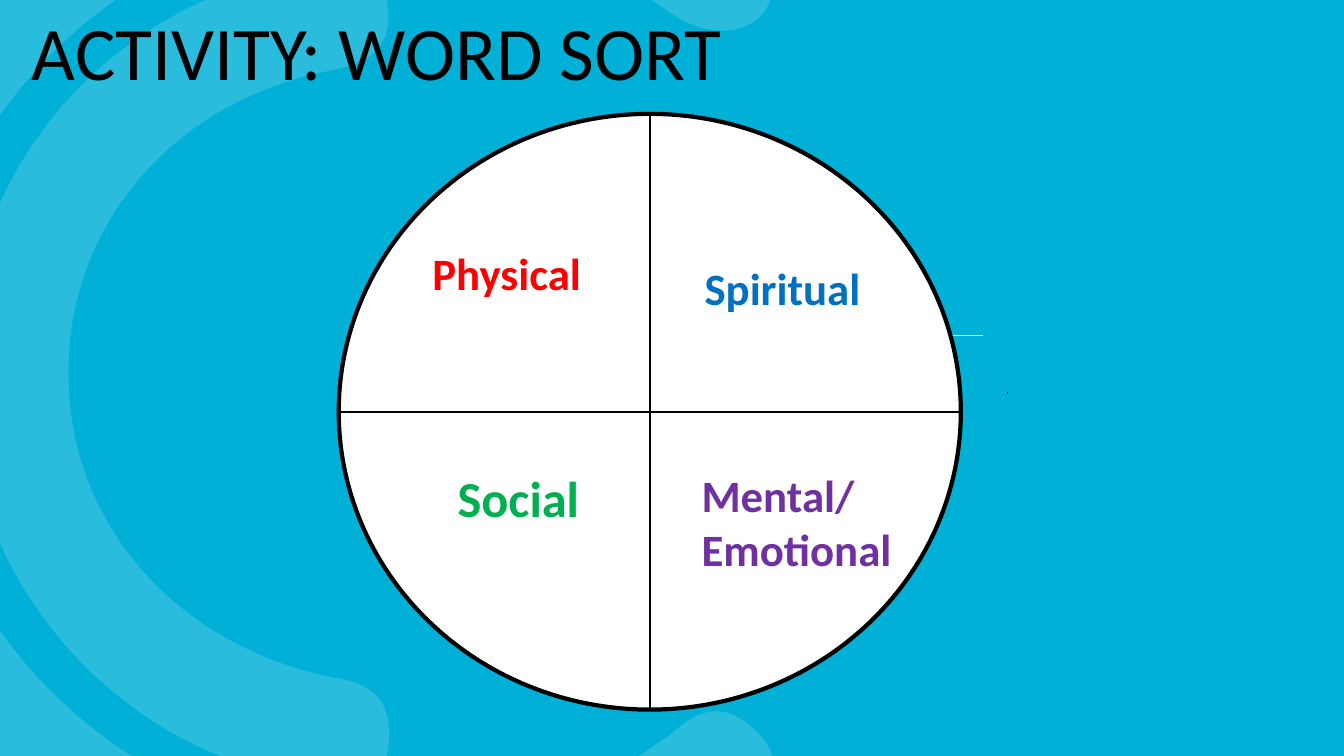
"""Build the word sort activity slide with a circle split into four kinds of health."""
from dataclasses import dataclass

import pptx
import pptx.dml.color
import pptx.enum.shapes
import pptx.enum.text
import pptx.oxml
import pptx.oxml.ns
import pptx.util
from pptx.util import Inches

Point = tuple[float, float]
Curve = tuple[float, float, float, float, float, float]


@dataclass(frozen=True)
class Theme:
    font: str = "Calibri"
    background: str = "00B0D7"
    white: str = "FFFFFF"
    black: str = "000000"
    red: str = "FF0000"
    blue: str = "0070C0"
    green: str = "00B050"
    purple: str = "7030A0"
    title_size: int = 54
    label_size: int = 32
    large_label_size: int = 36
    swirl_opacity: int = 16


@dataclass(frozen=True)
class Label:
    lines: tuple[str, ...]
    left: float
    top: float
    width: float
    height: float
    color: str
    size: int
    bold: bool = True
    wrap: bool = True
    centred: bool = False


@dataclass(frozen=True)
class Rule:
    start: Point
    end: Point
    color: str
    weight: float = 1.5


@dataclass(frozen=True)
class Swirl:
    start: Point
    curves: tuple[Curve, ...]


THEME = Theme()
SLIDE_WIDTH, SLIDE_HEIGHT = 13.33, 7.5
LEFT, TOP, WIDTH, HEIGHT = 3.36, 1.13, 6.17, 5.91
RIGHT, BOTTOM = LEFT + WIDTH, TOP + HEIGHT
CENTRE_X, CENTRE_Y = LEFT + WIDTH / 2, TOP + HEIGHT / 2

SWIRLS = (
    Swirl((-1.89, 3.38), (
        (-1.78, 1.51, -0.82, -0.2, 1.19, -1.22),
        (3.24, -2.24, 5.24, -2.05, 7.14, -0.81),
        (7.38, -0.64, 7.69, -0.49, 7.67, -0.15),
        (7.64, 0.31, 7.12, 0.46, 6.64, 0.12),
        (4.52, -1.39, 1.73, -1.05, 0.16, 0.93),
        (-1.24, 2.68, -1.1, 5.19, 0.44, 6.79),
        (2.04, 8.45, 4.57, 8.71, 6.47, 7.41),
        (6.53, 7.36, 6.62, 7.32, 6.68, 7.26),
        (6.99, 6.98, 7.27, 6.98, 7.56, 7.32),
        (7.86, 7.7, 7.56, 7.92, 7.29, 8.09),
        (5.81, 9.2, 4.15, 9.54, 2.34, 9.07),
        (-0.17, 8.43, -1.87, 6.21, -1.89, 3.38),
    )),
    Swirl((-0.36, 3.72), (
        (-0.36, 1.7, 1.03, 0.06, 3.06, -0.32),
        (3.37, -0.37, 3.74, -0.49, 3.83, -0.03),
        (3.91, 0.38, 3.78, 0.61, 3.28, 0.7),
        (1.71, 1, 0.66, 2.25, 0.68, 3.72),
        (0.68, 5.19, 1.75, 6.43, 3.35, 6.73),
        (3.8, 6.81, 3.89, 7.05, 3.85, 7.43),
        (3.78, 7.88, 3.43, 7.79, 3.13, 7.75),
        (1.16, 7.49, -0.36, 5.75, -0.36, 3.72),
    )),
)

BACKDROP_RULE = Rule((6.98, 3.33), (9.75, 3.33), THEME.white, 0.5)
UPRIGHT_RULE = Rule((CENTRE_X, TOP), (CENTRE_X, BOTTOM), THEME.black)
LEVEL_RULE = Rule((RIGHT, CENTRE_Y), (LEFT, CENTRE_Y), THEME.black)
DOT_RULE = Rule((9.99, 3.9), (10, 3.9), THEME.black)
QUARTERS = (
    Label(("Physical",), 4.19, 2.39, 1.81, 0.64, THEME.red, THEME.label_size),
    Label(("Spiritual",), 6.89, 2.54, 1.86, 0.64, THEME.blue, THEME.label_size),
    Label(("Social",), 4.44, 4.58, 1.57, 0.71, THEME.green, THEME.large_label_size),
    Label(("Mental/", "Emotional"), 6.86, 4.59, 2.2, 1.18, THEME.purple, THEME.label_size),
)
TITLE = Label(("ACTIVITY: WORD SORT",), 0.18, 0, 7.12, 1.01, THEME.black,
              THEME.title_size, bold=False, wrap=False, centred=True)


def rgb(color: str) -> pptx.dml.color.RGBColor:
    return pptx.dml.color.RGBColor.from_string(color)


def paint(shape, fill: str, outline: str | None = None, weight: float = 0) -> None:
    shape.shadow.inherit = False
    shape.fill.solid()
    shape.fill.fore_color.rgb = rgb(fill)
    if outline is None:
        shape.line.fill.background()
    else:
        shape.line.color.rgb = rgb(outline)
        shape.line.width = pptx.util.Pt(weight)


def bend(ribbon) -> None:
    segments = list(ribbon._element.iter(pptx.oxml.ns.qn("a:lnTo")))
    for first in range(0, len(segments), 3):
        curve = pptx.oxml.parse_xml(f'<a:cubicBezTo {pptx.oxml.ns.nsdecls("a")}/>')
        segments[first].addprevious(curve)
        for segment in segments[first:first + 3]:
            curve.append(segment[0])
            segment.getparent().remove(segment)


def draw_swirl(slide, swirl: Swirl) -> None:
    builder = slide.shapes.build_freeform(*(Inches(value) for value in swirl.start))
    builder.add_line_segments(
        [(Inches(curve[i]), Inches(curve[i + 1])) for curve in swirl.curves for i in (0, 2, 4)],
        close=False)
    ribbon = builder.convert_to_shape()
    bend(ribbon)
    outline = ribbon._element.find(".//" + pptx.oxml.ns.qn("a:path"))
    outline.append(pptx.oxml.parse_xml(f'<a:close {pptx.oxml.ns.nsdecls("a")}/>'))
    paint(ribbon, THEME.white)
    color = ribbon._element.spPr.find(".//" + pptx.oxml.ns.qn("a:srgbClr"))
    color.append(pptx.oxml.parse_xml(
        f'<a:alpha {pptx.oxml.ns.nsdecls("a")} val="{THEME.swirl_opacity * 1000}"/>'))


def draw_rule(slide, rule: Rule) -> None:
    divider = slide.shapes.add_connector(
        pptx.enum.shapes.MSO_CONNECTOR.STRAIGHT,
        *(Inches(value) for value in rule.start + rule.end))
    divider.line.color.rgb = rgb(rule.color)
    divider.line.width = pptx.util.Pt(rule.weight)
    divider._element.spPr.append(
        pptx.oxml.parse_xml(f'<a:effectLst {pptx.oxml.ns.nsdecls("a")}/>'))


def draw_label(slide, label: Label) -> None:
    frame = slide.shapes.add_textbox(
        Inches(label.left), Inches(label.top),
        Inches(label.width), Inches(label.height)).text_frame
    frame.word_wrap = label.wrap
    frame.auto_size = pptx.enum.text.MSO_AUTO_SIZE.SHAPE_TO_FIT_TEXT
    for index, line in enumerate(label.lines):
        paragraph = frame.add_paragraph() if index else frame.paragraphs[0]
        if label.centred:
            paragraph.alignment = pptx.enum.text.PP_ALIGN.CENTER
        run = paragraph.add_run()
        run.text = line
        run.font.name = THEME.font
        run.font.size = pptx.util.Pt(label.size)
        run.font.bold = label.bold
        run.font.color.rgb = rgb(label.color)


def main() -> None:
    deck = pptx.Presentation()
    deck.slide_width, deck.slide_height = Inches(SLIDE_WIDTH), Inches(SLIDE_HEIGHT)
    slide = deck.slides.add_slide(deck.slide_layouts[6])
    backdrop = slide.shapes.add_shape(
        pptx.enum.shapes.MSO_SHAPE.RECTANGLE, 0, 0, deck.slide_width, deck.slide_height)
    paint(backdrop, THEME.background)
    for swirl in SWIRLS:
        draw_swirl(slide, swirl)
    draw_rule(slide, BACKDROP_RULE)
    wheel = slide.shapes.add_shape(
        pptx.enum.shapes.MSO_SHAPE.OVAL,
        Inches(LEFT), Inches(TOP), Inches(WIDTH), Inches(HEIGHT))
    paint(wheel, THEME.white, THEME.black, 3)
    draw_rule(slide, UPRIGHT_RULE)
    for quarter in QUARTERS:
        draw_label(slide, quarter)
    draw_rule(slide, DOT_RULE)
    draw_label(slide, TITLE)
    draw_rule(slide, LEVEL_RULE)
    deck.save("out.pptx")


if __name__ == "__main__":
    main()
